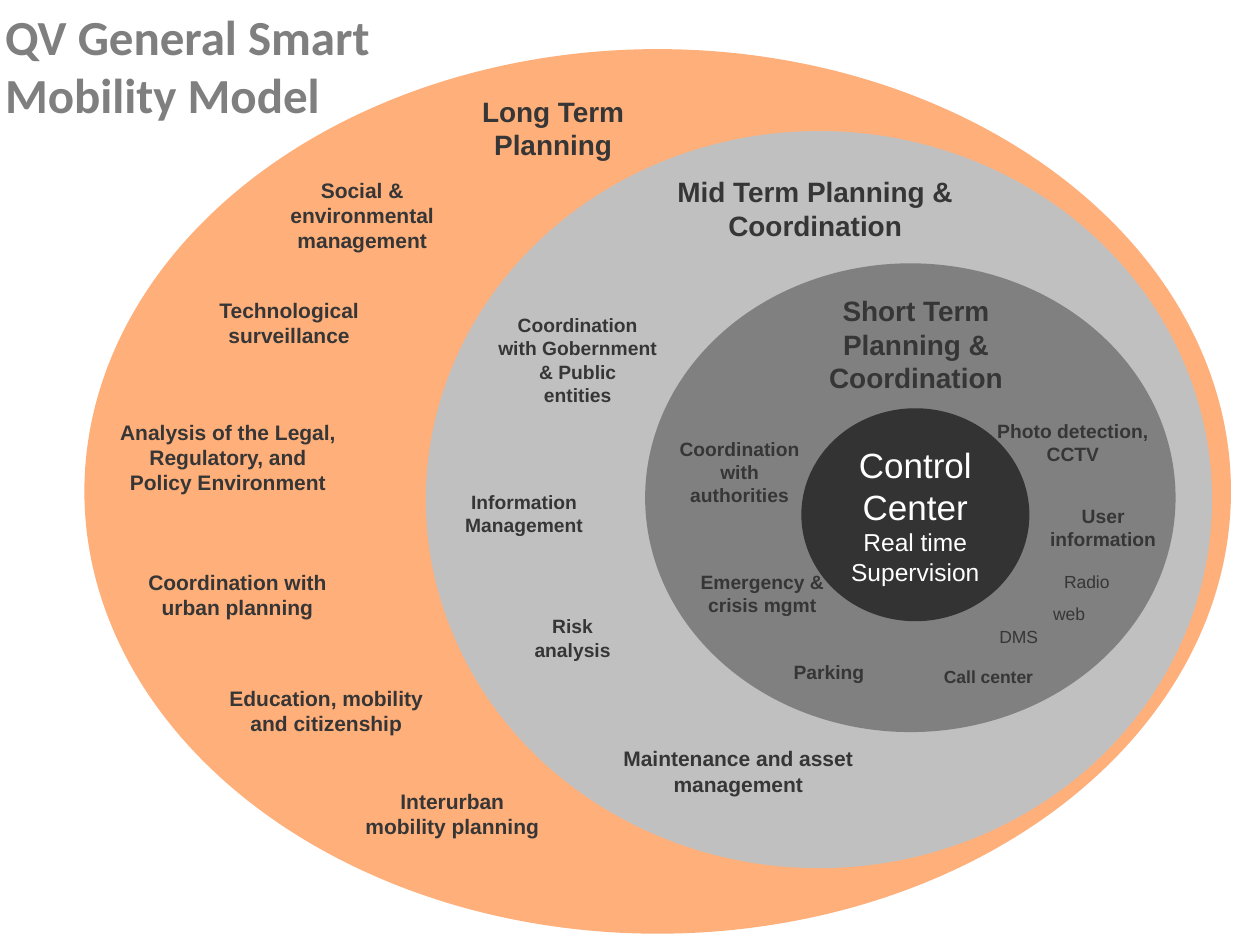
from lxml import etree
from pptx import Presentation
from pptx.dml.color import RGBColor
from pptx.enum.shapes import MSO_SHAPE
from pptx.enum.text import MSO_ANCHOR, PP_ALIGN
from pptx.oxml.ns import qn
from pptx.util import Inches, Pt

OVAL = MSO_SHAPE.OVAL
MIDDLE = MSO_ANCHOR.MIDDLE
LEFT, CENTER = PP_ALIGN.LEFT, PP_ALIGN.CENTER

COLORS = {
    "title": "7F7F7F", "text": "363636", "white": "FFFFFF",
    "long": "FF6600", "mid": "C0C0C0", "short": "808080", "core": "333333",
}

BOXES = {
    "title": (-0.06, 0.13, 4, 0.77),
    "long": (0.67, 0.39, 9.1, 7.02),
    "mid": (3.38, 1.04, 6.24, 5.85),
    "short": (5.12, 2.09, 4.21, 3.72),
    "core": (6.36, 3.24, 1.81, 1.69),
}

LABELS = {
    "long": [
        ("Long Term Planning", 2.71, 0.31, 2.02, 0.64, 16, True),
        ("Social & environmental management", 1.32, 0.97, 1.77, 0.71, 12, True),
        ("Technological surveillance", 0.82, 1.92, 1.61, 0.51, 12, True),
        ("Analysis of the Legal, Regulatory, and Policy Environment",
         0.16, 2.89, 1.96, 0.71, 12, True),
        ("Coordination with urban planning", 0.38, 4.08, 1.67, 0.51, 12, True),
        ("Education, mobility and citizenship", 1.02, 5, 1.8, 0.51, 12, True),
        ("Interurban mobility planning", 2.11, 5.82, 1.62, 0.51, 12, True),
    ],
    "mid": [
        ("Mid Term Planning &\nCoordination", 1.74, 0.3, 2.7, 0.64, 16, True),
        ("Coordination\nwith Gobernment\n& Public\nentities",
         0.13, 1.4, 2.15, 0.84, 11, True),
        ("Information Management", 0.1, 2.8, 1.36, 0.47, 11, True),
        ("Risk analysis", 0.6, 3.79, 1.13, 0.47, 11, True),
        ("Maintenance and asset management", 1.4, 4.83, 2.16, 0.51, 12, True),
    ],
    "short": [
        ("Short Term Planning &\nCoordination", 1.19, 0.19, 1.92, 0.91, 16, True),
        ("Coordination with authorities", 0.1, 1.33, 1.3, 0.66, 11, True),
        ("Photo detection, CCTV", 2.59, 1.19, 1.61, 0.47, 11, True),
        ("User information", 2.98, 1.86, 1.31, 0.47, 11, True),
        ("Emergency & crisis mgmt", 0.19, 2.39, 1.48, 0.47, 11, True),
        ("Parking", 0.69, 3.1, 1.54, 0.28, 11, True),
        ("Radio", 2.96, 2.39, 1.09, 0.27, 10, False),
        ("web", 2.82, 2.65, 1.09, 0.27, 10, False),
        ("DMS", 2.42, 2.83, 1.09, 0.27, 10, False),
        ("Call center", 2.18, 3.15, 1.09, 0.27, 10, True),
    ],
}


def style(para, size, color, bold=False, face="Arial", align=CENTER):
    """Set the font and alignment of a paragraph."""
    para.alignment = align
    font = para.font
    font.name, font.size, font.bold = face, Pt(size), bold
    font.color.rgb = RGBColor.from_string(COLORS[color])


def add_title(slide, box):
    """Place and format the slide title."""
    title = slide.shapes.title
    title.left, title.top, title.width, title.height = map(Inches, box)
    frame = title.text_frame
    frame.text = "QV General Smart Mobility Model"
    frame.vertical_anchor = MIDDLE
    style(frame.paragraphs[0], 28, "title", True, "Calibri", LEFT)


def add_ring(slide, box, color, alpha=None):
    """Draw a plain oval that fills the box."""
    oval = slide.shapes.add_shape(OVAL, *map(Inches, box))
    oval.shadow.inherit = False
    oval.fill.solid()
    oval.fill.fore_color.rgb = RGBColor.from_string(COLORS[color])
    oval.line.fill.background()
    if alpha:
        tone = oval.fill._xPr.find(f".//{qn('a:srgbClr')}")
        etree.SubElement(tone, qn("a:alpha"), val=str(alpha * 1000))
    return oval


def add_core(slide, box):
    """Draw the control center with its caption."""
    frame = add_ring(slide, box, "core").text_frame
    frame.word_wrap = False
    frame.margin_top = frame.margin_bottom = 0
    frame.vertical_anchor = MIDDLE
    frame.text = "Control\nCenter\nReal time\nSupervision"
    for para, size in zip(frame.paragraphs, (20, 20, 14, 14)):
        style(para, size, "white")


def add_labels(slide, box, items):
    """Write the labels of a ring, offset from the corner of its box."""
    left, top = box[:2]
    for text, x, y, width, height, size, bold in items:
        label = slide.shapes.add_textbox(
            Inches(left + x), Inches(top + y), Inches(width), Inches(height))
        frame = label.text_frame
        frame.word_wrap = True
        frame.text = text
        for para in frame.paragraphs:
            style(para, size, "text", bold)


def main():
    """Build the slide and save it."""
    deck = Presentation()
    deck.slide_width, deck.slide_height = Inches(10), Inches(7.5)
    slide = deck.slides.add_slide(deck.slide_layouts[5])
    add_title(slide, BOXES["title"])
    for name, alpha in (("long", 52), ("mid", None), ("short", None)):
        add_ring(slide, BOXES[name], name, alpha)
    add_core(slide, BOXES["core"])
    for name, items in LABELS.items():
        add_labels(slide, BOXES[name], items)
    deck.save("out.pptx")


if __name__ == "__main__":
    main()
